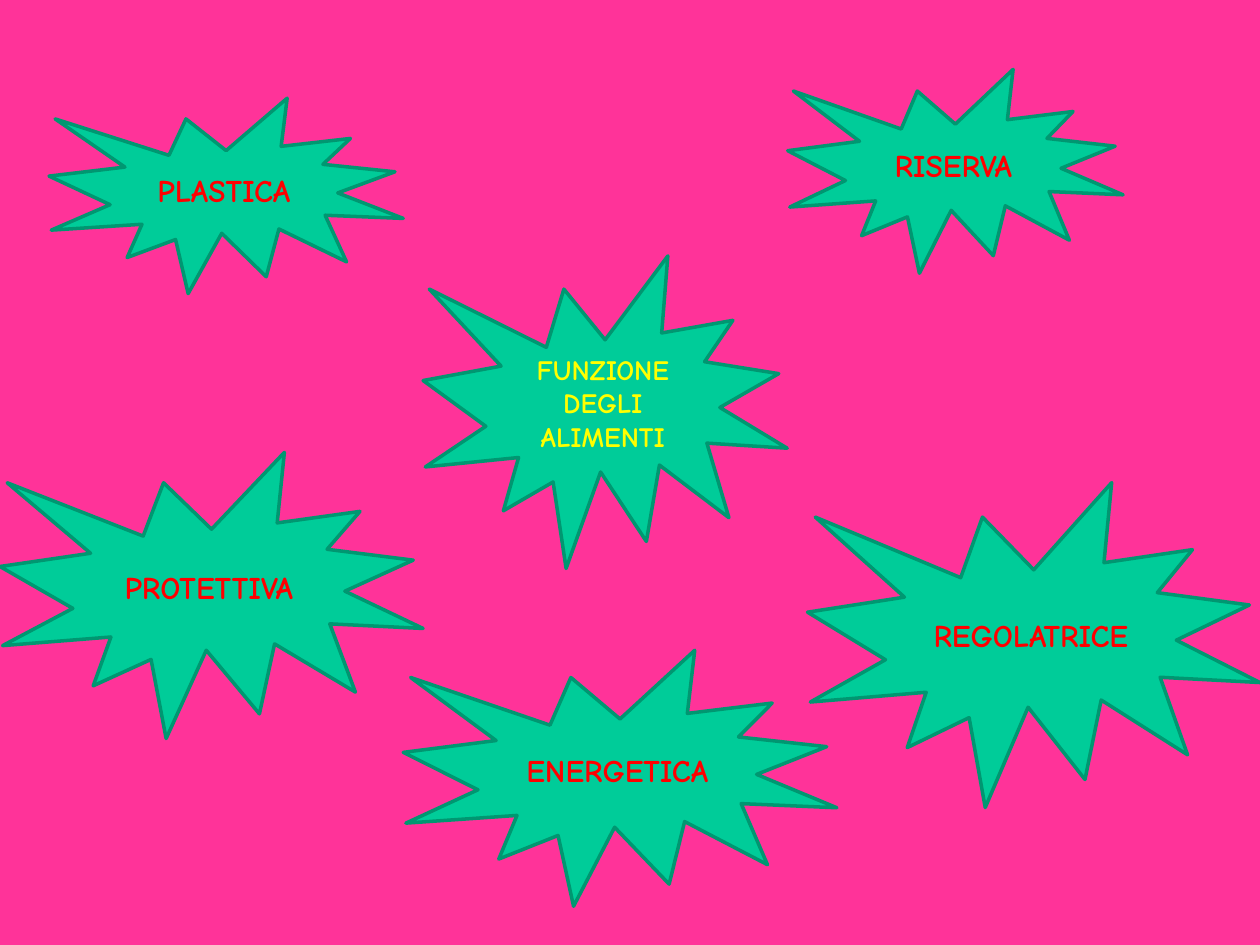
"""Build a slide of starbursts naming the functions of foods."""
from dataclasses import dataclass

from pptx import Presentation
from pptx.dml.color import RGBColor
from pptx.enum.shapes import MSO_SHAPE
from pptx.enum.text import MSO_ANCHOR, PP_ALIGN
from pptx.slide import Slide
from pptx.util import Cm, Pt

COLOURS = {
    "background": "FF3399",
    "burst": "00CC99",
    "outline": "009771",
    "title": "FFFF00",
    "label": "FF0000",
}
FONT = "Comic Neue"


@dataclass(frozen=True)
class Burst:
    text: str
    left: float
    top: float
    width: float
    height: float
    size: int = 18
    colour: str = "label"


BURSTS = [
    Burst("FUNZIONE DEGLI ALIMENTI", 8.53, 5.16, 7.34, 6.3, 16, "title"),
    Burst("PLASTICA", 0.99, 1.98, 7.14, 3.94),
    Burst("PROTETTIVA", 0, 9.12, 8.53, 5.77),
    Burst("RISERVA", 15.88, 1.4, 6.76, 4.11),
    Burst("REGOLATRICE", 16.28, 9.73, 9.12, 6.55),
    Burst("ENERGETICA", 8.13, 13.11, 8.74, 5.16),
]


def rgb(name: str) -> RGBColor:
    return RGBColor.from_string(COLOURS[name])


def draw_burst(page: Slide, burst: Burst) -> None:
    box = page.shapes.add_shape(
        MSO_SHAPE.EXPLOSION1,
        Cm(burst.left), Cm(burst.top), Cm(burst.width), Cm(burst.height),
    )
    box.shadow.inherit = False
    box.fill.solid()
    box.fill.fore_color.rgb = rgb("burst")
    box.line.color.rgb = rgb("outline")
    box.line.width = Pt(2)

    frame = box.text_frame
    frame.text = burst.text
    frame.word_wrap = True
    frame.vertical_anchor = MSO_ANCHOR.MIDDLE
    para = frame.paragraphs[0]
    para.alignment = PP_ALIGN.CENTER
    for span in para.runs:
        span.font.name = FONT
        span.font.size = Pt(burst.size)
        span.font.bold = True
        span.font.color.rgb = rgb(burst.colour)


def main() -> None:
    deck = Presentation()
    deck.slide_width, deck.slide_height = Cm(25.4), Cm(19.05)
    page = deck.slides.add_slide(deck.slide_layouts[6])
    page.background.fill.solid()
    page.background.fill.fore_color.rgb = rgb("background")
    for burst in BURSTS:
        draw_burst(page, burst)
    deck.save("out.pptx")


if __name__ == "__main__":
    main()
